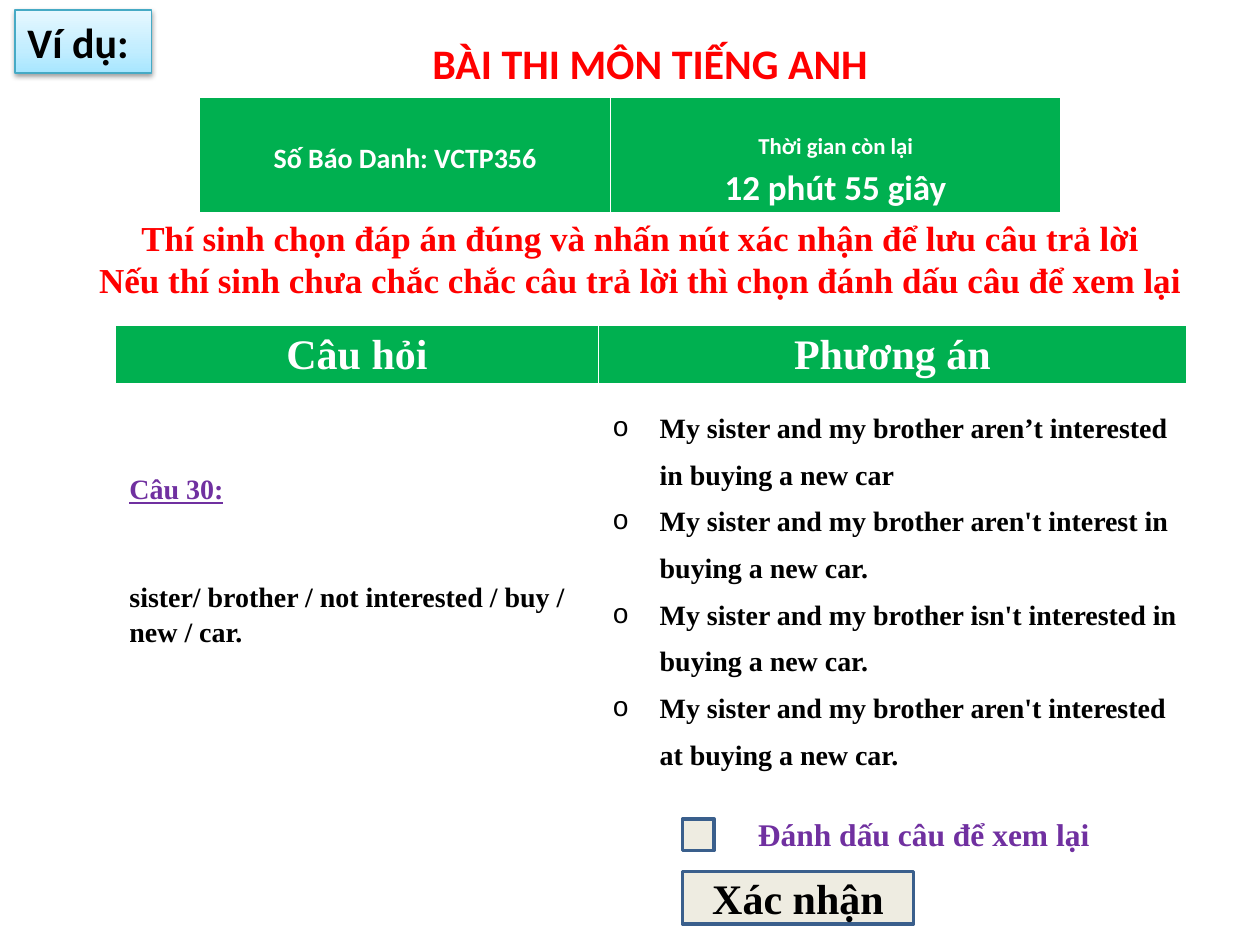
from dataclasses import dataclass

from lxml import etree
from pptx import Presentation
from pptx.dml.color import RGBColor
from pptx.enum import shapes, text
from pptx.oxml import parse_xml
from pptx.oxml.ns import nsdecls, qn
from pptx.util import Pt

LEFT, CENTER = text.PP_ALIGN.LEFT, text.PP_ALIGN.CENTER


@dataclass(frozen=True)
class Theme:
    sans: str = "Calibri"
    serif: str = "Times New Roman"
    bullet: str = "Courier New"
    black: str = "000000"
    white: str = "FFFFFF"
    red: str = "FF0000"
    green: str = "00B050"
    purple: str = "7030A0"
    button: str = "EEECE1"
    outline: str = "3A5F8C"
    tag_line: str = "46AAC5"
    tag_stops: tuple = ((0, "A7E6FF"), (35, "C1EDFF"), (100, "E7F8FF"))
    head: int = 24
    note: int = 20
    mark: int = 18
    body: int = 16
    small: int = 13


T = Theme()


def rgb(value):
    return RGBColor.from_string(value)


def write(tf, lines, size=T.body, color=T.black, font=T.serif, align=LEFT,
          spacing=None, before=0, underline=False, bullet=None, first=True):
    """Write one paragraph per line; first=False adds to existing text."""
    for i, line in enumerate(lines):
        p = tf.paragraphs[0] if first and i == 0 else tf.add_paragraph()
        p.alignment = align
        if spacing:
            p.line_spacing = spacing
        if before:
            p.space_before = Pt(before)
        if bullet:
            pPr = p._p.get_or_add_pPr()
            pPr.set("marL", str(Pt(27)))
            pPr.set("indent", str(-Pt(27)))
            etree.SubElement(pPr, qn("a:buFont")).set("typeface", T.bullet)
            etree.SubElement(pPr, qn("a:buChar")).set("char", bullet)
        r = p.add_run()
        r.text = line
        r.font.name, r.font.size, r.font.bold = font, Pt(size), True
        r.font.underline = underline
        r.font.color.rgb = rgb(color)


class Deck:
    def __init__(self, width, height):
        self.prs = Presentation()
        self.prs.slide_width, self.prs.slide_height = Pt(width), Pt(height)
        self.s = self.prs.slides.add_slide(self.prs.slide_layouts[6])

    def label(self, x, y, w, h, lines, **fmt):
        tf = self.s.shapes.add_textbox(Pt(x), Pt(y), Pt(w), Pt(h)).text_frame
        tf.word_wrap = True
        write(tf, lines, **fmt)

    def box(self, x, y, w, h, lines=(), fill=T.button, line=T.outline,
            weight=2, anchor=text.MSO_ANCHOR.MIDDLE, **fmt):
        sp = self.s.shapes.add_shape(shapes.MSO_SHAPE.RECTANGLE,
                                     Pt(x), Pt(y), Pt(w), Pt(h))
        sp.shadow.inherit = False
        sp.fill.solid()
        sp.fill.fore_color.rgb = rgb(fill)
        sp.line.color.rgb, sp.line.width = rgb(line), Pt(weight)
        sp.text_frame.word_wrap = True
        sp.text_frame.vertical_anchor = anchor
        write(sp.text_frame, lines, **fmt)
        return sp

    def tag(self, x, y, w, h, lines, **fmt):
        """Box with a gradient fill and a soft shadow."""
        sp = self.box(x, y, w, h, lines, line=T.tag_line, weight=0.75,
                      anchor=text.MSO_ANCHOR.TOP, **fmt)
        stops = "".join(
            f'<a:gs pos="{pos * 1000}"><a:srgbClr val="{c}"/></a:gs>'
            for pos, c in T.tag_stops)
        spPr = sp._element.spPr
        spPr.replace(spPr.find(qn("a:solidFill")), parse_xml(
            f'<a:gradFill {nsdecls("a")} rotWithShape="1"><a:gsLst>{stops}'
            '</a:gsLst><a:lin ang="16200000" scaled="1"/></a:gradFill>'))
        spPr.replace(spPr.find(qn("a:effectLst")), parse_xml(
            f'<a:effectLst {nsdecls("a")}><a:outerShdw blurRad="{Pt(3.1)}" '
            f'dist="{Pt(1.6)}" dir="5400000" rotWithShape="0">'
            f'<a:srgbClr val="{T.black}"><a:alpha val="38000"/></a:srgbClr>'
            '</a:outerShdw></a:effectLst>'))

    def row(self, x, y, widths, h, fill, tops=(0, 0)):
        """One-row table; returns the text frames of its cells."""
        table = self.s.shapes.add_table(1, len(widths), Pt(x), Pt(y),
                                        Pt(sum(widths)), Pt(h)).table
        table.rows[0].height = Pt(h)
        for col, width in zip(table.columns, widths):
            col.width = Pt(width)
        for cell, top in zip(table.rows[0].cells, tops):
            cell.fill.solid()
            cell.fill.fore_color.rgb = rgb(fill)
            cell.margin_left = cell.margin_right = Pt(5)
            cell.margin_top, cell.margin_bottom = Pt(top), 0
        return [cell.text_frame for cell in table.rows[0].cells]


def main():
    deck = Deck(720, 540)

    # Tag and title
    deck.tag(8.64, 5.76, 78, 36, ["Ví dụ:"], size=T.head, font=T.sans)
    deck.label(240, 18, 282, 36, ["BÀI THI MÔN TIẾNG ANH"],
               size=T.head, font=T.sans, color=T.red)

    # Candidate number and time left
    number, clock = deck.row(114, 55.8, (235, 257), 66, T.green, (22.5, 18))
    fmt = dict(font=T.sans, color=T.white, align=CENTER, spacing=1.15)
    write(number, ["Số Báo Danh: VCTP356"], **fmt)
    write(clock, ["Thời gian còn lại"], size=T.small, **fmt)
    write(clock, ["12 phút 55 giây"], size=T.note, first=False, **fmt)

    # Instructions
    deck.label(48, 120, 636, 55.5, [
        "Thí sinh chọn đáp án đúng và nhấn nút xác nhận để lưu câu trả lời",
        "Nếu thí sinh chưa chắc chắc câu trả lời thì chọn đánh dấu câu để xem lại",
    ], size=T.note, color=T.red, align=CENTER)

    # Column headings
    columns = (276, 336)
    headings = deck.row(66, 186, columns, 33, T.green)
    for tf, heading in zip(headings, ("Câu hỏi", "Phương án")):
        write(tf, [heading], size=T.head, color=T.white, align=CENTER,
              spacing=1.15)

    # Check box and confirm button
    deck.box(390, 468, 18, 18)
    deck.label(426, 462, 228, 29, ["Đánh dấu câu để xem lại"],
               size=T.mark, color=T.purple)
    deck.box(390, 498, 132, 30, ["Xác nhận"], size=T.head, align=CENTER)

    # Question and answers
    question, answers = deck.row(69, 227.5, columns, 230, T.white, (41, 0))
    write(question, ["Câu 30:"], color=T.purple, underline=True, spacing=1.15)
    write(question, ["sister/ brother / not interested / buy / new / car."],
          spacing=1.15, before=41, first=False)
    write(answers, [
        "My sister and my brother aren’t interested in buying a new car",
        "My sister and my brother aren't interest in buying a new car.",
        "My sister and my brother isn't interested in buying a new car.",
        "My sister and my brother aren't interested at buying a new car.",
    ], spacing=1.5, bullet="o")

    deck.prs.save("out.pptx")


if __name__ == "__main__":
    main()
